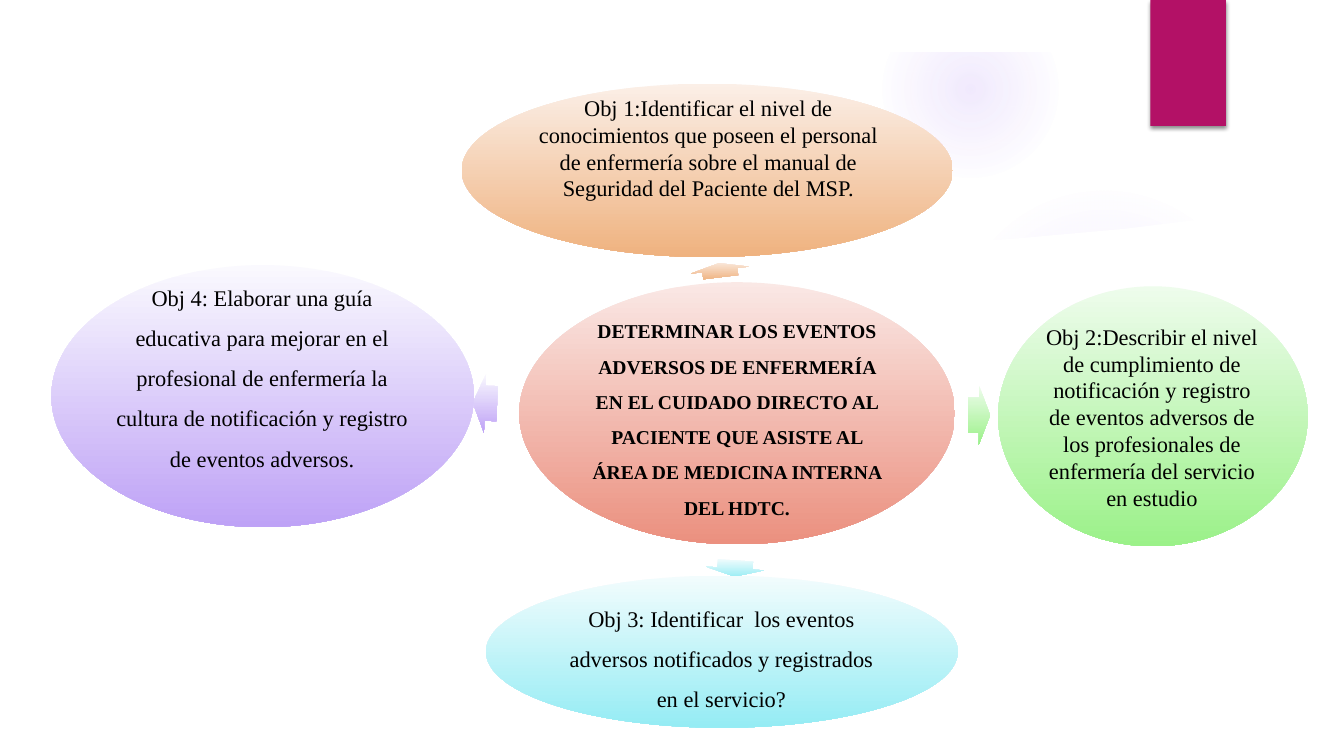
import pptx
import pptx.util
import pptx.dml.color
import pptx.enum.shapes
import pptx.enum.text
import pptx.oxml
import pptx.oxml.ns
from dataclasses import dataclass

KIND = pptx.enum.shapes.MSO_SHAPE
ALIGN = pptx.enum.text.PP_ALIGN
ANCHOR = pptx.enum.text.MSO_ANCHOR
FIT = pptx.enum.text.MSO_AUTO_SIZE
SCALE = 9144


@dataclass
class Theme:
    font: str = "Times New Roman"
    head: int = 14
    body: int = 16
    ink: str = "000000"
    paper: str = "FFFFFF"
    tab: str = "B31166"
    glow: str = "9B6BF2"
    red: tuple = ("FAE8E5", "EB907F")
    peach: tuple = ("FBEFE7", "EFB27F")
    green: tuple = ("EEFCEC", "9BF189")
    aqua: tuple = ("F2FCFD", "95ECF4")
    lilac: tuple = ("FAF9FE", "BEA2F6")


def px(num):
    return pptx.util.Emu(num * SCALE)


def rgb(code):
    return pptx.dml.color.RGBColor.from_string(code)


def put(item, vals):
    for name, val in vals.items():
        setattr(item, name, val)


class Board:
    """Draws styled shapes and text on one slide."""

    def __init__(self, deck, theme):
        self.theme = theme
        self.slide = deck.slides.add_slide(deck.slide_layouts[5])
        self.shapes = self.slide.shapes

    def shape(self, kind, box):
        item = self.shapes.add_shape(kind, *map(px, box))
        item.shadow.inherit = False
        item.line.fill.background()
        return item

    def plain(self, item, color):
        item.fill.solid()
        item.fill.fore_color.rgb = rgb(color)

    def fade(self, item, pair):
        item.fill.gradient()
        item.fill.gradient_angle = 270
        for stop, color in zip(item.fill.gradient_stops, pair):
            stop.color.rgb = rgb(color)
        grad = item.element.spPr.find(pptx.oxml.ns.qn("a:gradFill"))
        grad.set("rotWithShape", "0")

    def oval(self, box, pair):
        self.fade(self.shape(KIND.OVAL, box), pair)

    def arrow(self, box, turn, pair):
        item = self.shape(KIND.RIGHT_ARROW, box)
        item.adjustments[0] = 0.6
        item.adjustments[1] = 0.5
        item.rotation = turn
        self.fade(item, pair)

    def halo(self, box, stops):
        item = self.shape(KIND.OVAL, box)
        item.fill.gradient()
        old = item.element.spPr.find(pptx.oxml.ns.qn("a:gradFill"))
        marks = "".join(
            f'<a:gs pos="{pos * 1000}"><a:srgbClr val="{self.theme.glow}">'
            f'<a:alpha val="{alpha * 1000}"/></a:srgbClr></a:gs>'
            for pos, alpha in stops)
        new = pptx.oxml.parse_xml(
            f'<a:gradFill {pptx.oxml.ns.nsdecls("a")} rotWithShape="1">'
            f'<a:gsLst>{marks}</a:gsLst><a:path path="circle">'
            '<a:fillToRect l="50000" t="50000" r="50000" b="50000"/>'
            '</a:path></a:gradFill>')
        old.getparent().replace(old, new)

    def patch(self, points):
        pen = self.shapes.build_freeform(*points[0], scale=SCALE)
        pen.add_line_segments(points[1:], close=True)
        item = pen.convert_to_shape()
        item.shadow.inherit = False
        item.line.fill.background()
        self.plain(item, self.theme.paper)

    def tab(self, box):
        item = self.shape(KIND.RECTANGLE, box)
        self.plain(item, self.theme.tab)
        glow = item.element.spPr.find(pptx.oxml.ns.qn("a:effectLst"))
        glow.append(pptx.oxml.parse_xml(
            f'<a:outerShdw {pptx.oxml.ns.nsdecls("a")} blurRad="38100" '
            'dist="25400" dir="5400000" rotWithShape="0">'
            f'<a:srgbClr val="{self.theme.ink}"><a:alpha val="45000"/>'
            '</a:srgbClr></a:outerShdw>'))

    def label(self, item, text, size, bold, gap):
        frame = item.text_frame
        frame.text = text
        edge = px(2)
        put(frame, dict(word_wrap=True, auto_size=FIT.NONE,
                        vertical_anchor=ANCHOR.MIDDLE,
                        margin_left=edge, margin_right=edge,
                        margin_top=edge, margin_bottom=edge))
        line = frame.paragraphs[0]
        put(line, dict(alignment=ALIGN.CENTER, line_spacing=gap,
                       space_before=pptx.util.Pt(0)))
        font = line.runs[0].font
        put(font, dict(name=self.theme.font, size=pptx.util.Pt(size),
                       bold=bold))
        font.color.rgb = rgb(self.theme.ink)

    def title(self, box, text):
        item = self.shapes.title
        put(item, dict(zip(("left", "top", "width", "height"), map(px, box))))
        self.label(item, text, self.theme.head, True, 1.5)
        item.element.getparent().append(item.element)

    def note(self, box, text, gap):
        item = self.shapes.add_textbox(*map(px, box))
        self.label(item, text, self.theme.body, False, gap)


def main():
    deck = pptx.Presentation()
    put(deck, dict(slide_width=px(1333), slide_height=px(750)))
    theme = Theme()
    board = Board(deck, theme)

    board.halo((941, 183, 308, 308), ((0, 7), (36, 6), (69, 0)))
    board.halo((875, 1, 175, 175), ((0, 14), (36, 7), (73, 0)))
    board.patch([(875, 0), (1050, 0), (1050, 52), (875, 52)])
    board.patch([(941, 241), (1004, 237), (1060, 232), (1116, 227),
                 (1172, 220), (1228, 213), (1284, 204), (1284, 500),
                 (941, 500)])
    board.tab((1141, 0, 75, 125))

    board.oval((515, 280, 432, 260), theme.red)
    board.title((578, 318, 306, 184),
                "DETERMINAR LOS EVENTOS ADVERSOS DE ENFERMERÍA EN EL CUIDADO "
                "DIRECTO AL PACIENTE QUE ASISTE AL ÁREA DE MEDICINA INTERNA "
                "DEL HDTC.")

    goals = [
        (theme.peach, (707, 239, 14, 58), 263.1, (458, 83, 487, 172),
         (530, 86, 345, 121), 1.0,
         "Obj 1:Identificar el nivel de conocimientos que poseen el personal "
         "de enfermería sobre el manual de Seguridad del Paciente del MSP."),
        (theme.green, (960, 383, 22, 58), 0.4, (990, 284, 307, 258),
         (1034, 322, 217, 183), 1.0,
         "Obj 2:Describir el nivel de cumplimiento de notificación y registro "
         "de eventos adversos de los profesionales de enfermería del servicio "
         "en estudio"),
        (theme.aqua, (721, 535, 16, 58), 93.7, (482, 571, 468, 151),
         (550, 593, 331, 107), 1.5,
         "Obj 3: Identificar  los eventos adversos notificados y registrados "
         "en el servicio?"),
        (theme.lilac, (469, 371, 24, 58), 182.1, (51, 263, 419, 260),
         (112, 276, 296, 184), 1.5,
         "Obj 4: Elaborar una guía educativa para mejorar en el profesional "
         "de enfermería la cultura de notificación y registro de eventos "
         "adversos."),
    ]
    for pair, dart, turn, ring, area, gap, text in goals:
        board.arrow(dart, turn, pair)
        board.oval(ring, pair)
        board.note(area, text, gap)

    deck.save("out.pptx")


if __name__ == "__main__":
    main()
